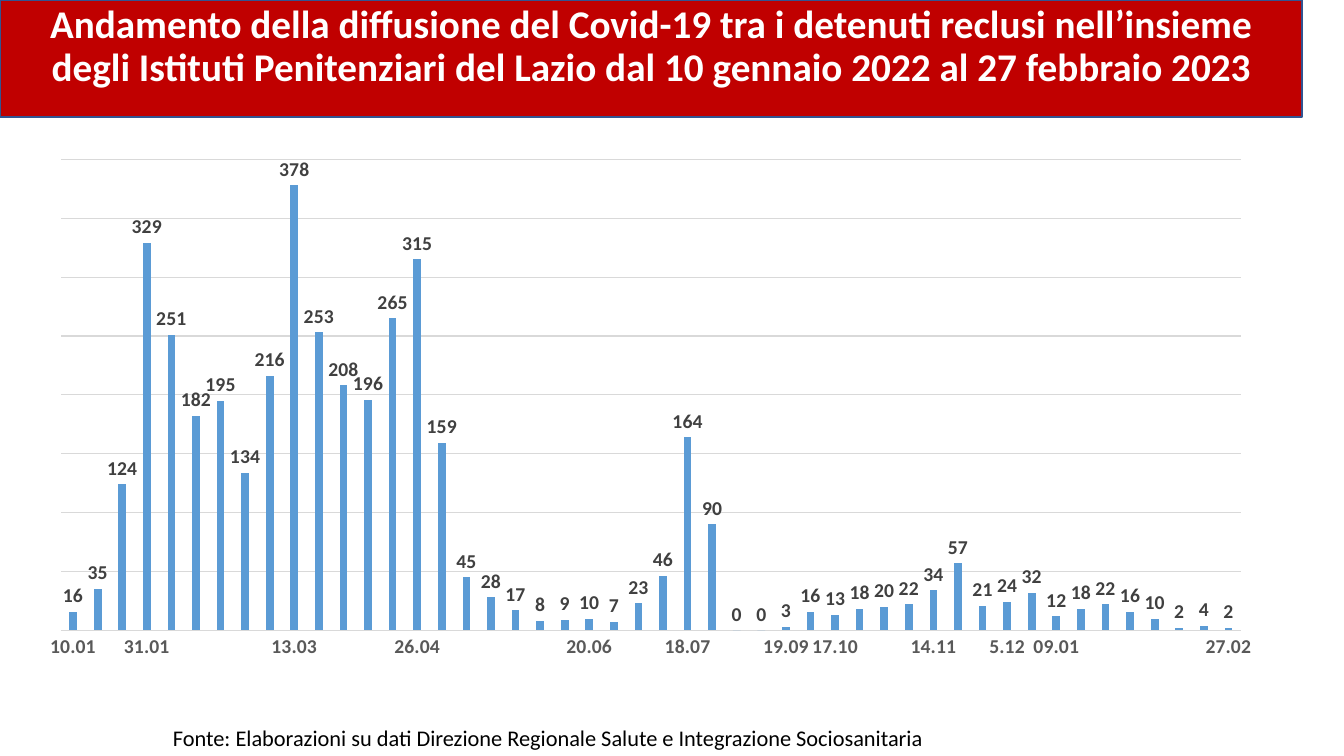
from dataclasses import dataclass

from lxml.etree import SubElement
from pptx import Presentation
from pptx.chart.data import CategoryChartData
from pptx.dml.color import RGBColor
from pptx.enum.chart import XL_CHART_TYPE as ChartType
from pptx.enum.chart import XL_LABEL_POSITION as LabelPosition
from pptx.enum.chart import XL_TICK_MARK as TickMark
from pptx.enum.text import MSO_ANCHOR as Anchor
from pptx.enum.text import MSO_AUTO_SIZE as AutoSize
from pptx.enum.text import PP_ALIGN as Align
from pptx.oxml.ns import qn
from pptx.util import Pt

PX = 914400 / 100.8
SLIDE_SIZE = (1344, 756)

TITLE = (
    "Andamento della diffusione del Covid-19 tra i detenuti reclusi nell’insieme "
    "degli Istituti Penitenziari del Lazio dal 10 gennaio 2022 al 27 febbraio 2023"
)
SOURCE = "Fonte: Elaborazioni su dati Direzione Regionale Salute e Integrazione Sociosanitaria"

CASES = [
    16, 35, 124, 329, 251, 182, 195, 134, 216, 378, 253, 208,
    196, 265, 315, 159, 45, 28, 17, 8, 9, 10, 7, 23,
    46, 164, 90, 0, 0, 3, 16, 13, 18, 20, 22, 34,
    57, 21, 24, 32, 12, 18, 22, 16, 10, 2, 4, 2,
]
DATES = {
    0: "10.01", 3: "31.01", 9: "13.03", 14: "26.04", 21: "20.06", 25: "18.07",
    29: "19.09", 31: "17.10", 35: "14.11", 38: "5.12", 40: "09.01", 47: "27.02",
}


@dataclass(frozen=True)
class Theme:
    font: str = "Calibri"
    banner: str = "C00000"
    banner_line: str = "325491"
    banner_text: str = "FFFFFF"
    text: str = "000000"
    column: str = "5B9BD5"
    value_text: str = "404040"
    axis_text: str = "595959"
    grid: str = "D9D9D9"
    title_size: int = 28
    source_size: int = 16
    chart_size: int = 14


def px(length):
    return round(length * PX)


def box(*lengths):
    return [px(length) for length in lengths]


def format_font(font, name, size, color, bold=False):
    font.name = name
    font.size = Pt(size)
    font.bold = bold
    font.color.rgb = RGBColor.from_string(color)


def format_line(line, color, width):
    line.color.rgb = RGBColor.from_string(color)
    line.width = Pt(width)


def write_text(frame, text, *, align=Align.LEFT, spacing=1.0, **font_format):
    paragraph = frame.paragraphs[0]
    paragraph.alignment = align
    paragraph.line_spacing = spacing
    paragraph.space_before = Pt(0)
    run = paragraph.add_run()
    run.text = text
    format_font(run.font, **font_format)


def fix_plot_area(chart, **fractions):
    """Place the inner plot area by fractions x, y, w, h of the chart."""
    plot_area = chart.element.find(f".//{qn('c:plotArea')}")
    layout = plot_area.find(qn("c:layout"))
    if layout is None:
        layout = SubElement(plot_area, qn("c:layout"))
        plot_area.insert(0, layout)
    manual = SubElement(layout, qn("c:manualLayout"))
    settings = {"layoutTarget": "inner", "xMode": "edge", "yMode": "edge", **fractions}
    for tag, value in settings.items():
        SubElement(manual, qn(f"c:{tag}")).set("val", str(value))


def show_every_label(axis):
    """Keep all category labels, unrotated and on one line."""
    element = axis.format.line and axis.tick_labels.font and chart_axis_element(axis)
    element.find(f"{qn('c:txPr')}/{qn('a:bodyPr')}").set("rot", "-60000000")
    skip = SubElement(element, qn("c:tickLblSkip"))
    skip.set("val", "1")
    element.find(qn("c:noMultiLvlLbl")).addprevious(skip)


def chart_axis_element(axis):
    return axis.element if hasattr(axis, "element") else axis._element


class SlideBuilder:
    def __init__(self, presentation, theme):
        self.theme = theme
        self.slide = presentation.slides.add_slide(presentation.slide_layouts[5])

    def title(self, text, left, top, width, height):
        theme = self.theme
        shape = self.slide.shapes.title
        shape.left, shape.top, shape.width, shape.height = box(left, top, width, height)
        shape.fill.solid()
        shape.fill.fore_color.rgb = RGBColor.from_string(theme.banner)
        format_line(shape.line, theme.banner_line, 1)
        frame = shape.text_frame
        frame.word_wrap = True
        frame.auto_size = AutoSize.NONE
        frame.vertical_anchor = Anchor.TOP
        write_text(frame, text, align=Align.CENTER, spacing=0.9, name=theme.font,
                   size=theme.title_size, color=theme.banner_text, bold=True)

    def caption(self, text, left, top, width, height):
        theme = self.theme
        frame = self.slide.shapes.add_textbox(*box(left, top, width, height)).text_frame
        frame.word_wrap = False
        frame.auto_size = AutoSize.SHAPE_TO_FIT_TEXT
        write_text(frame, text, name=theme.font, size=theme.source_size, color=theme.text)

    def column_chart(self, categories, values, left, top, width, height):
        theme = self.theme
        data = CategoryChartData()
        data.categories = categories
        data.add_series("Series 1", values)
        chart = self.slide.shapes.add_chart(
            ChartType.COLUMN_CLUSTERED, *box(left, top, width, height), data
        ).chart
        chart.has_legend = False
        chart.has_title = False
        text_format = dict(name=theme.font, size=theme.chart_size, bold=True)
        format_font(chart.font, color=theme.text, **text_format)
        fix_plot_area(chart, x=0.0286, y=0.02, w=0.9425, h=0.906)

        plot = chart.plots[0]
        plot.gap_width = 219
        plot.overlap = -27
        plot.vary_by_categories = False
        column_fill = plot.series[0].format.fill
        column_fill.solid()
        column_fill.fore_color.rgb = RGBColor.from_string(theme.column)
        plot.has_data_labels = True
        labels = plot.data_labels
        labels.show_value = True
        labels.position = LabelPosition.OUTSIDE_END
        format_font(labels.font, color=theme.value_text, **text_format)

        value_axis = chart.value_axis
        value_axis.minimum_scale, value_axis.maximum_scale = 0, 400
        value_axis.major_unit = 50
        value_axis.visible = False
        format_line(value_axis.major_gridlines.format.line, theme.grid, 0.75)

        date_axis = chart.category_axis
        date_axis.major_tick_mark = TickMark.NONE
        format_line(date_axis.format.line, theme.grid, 0.75)
        format_font(date_axis.tick_labels.font, color=theme.axis_text, **text_format)
        show_every_label(date_axis)


def main():
    presentation = Presentation()
    presentation.slide_width, presentation.slide_height = box(*SLIDE_SIZE)
    builder = SlideBuilder(presentation, Theme())
    builder.title(TITLE, 0, 0, 1302, 117)
    builder.caption(SOURCE, 163, 719, 790, 37)
    dates = [DATES.get(index, "") for index in range(len(CASES))]
    builder.column_chart(dates, CASES, 25, 149, 1252, 520)
    presentation.save("out.pptx")


if __name__ == "__main__":
    main()
